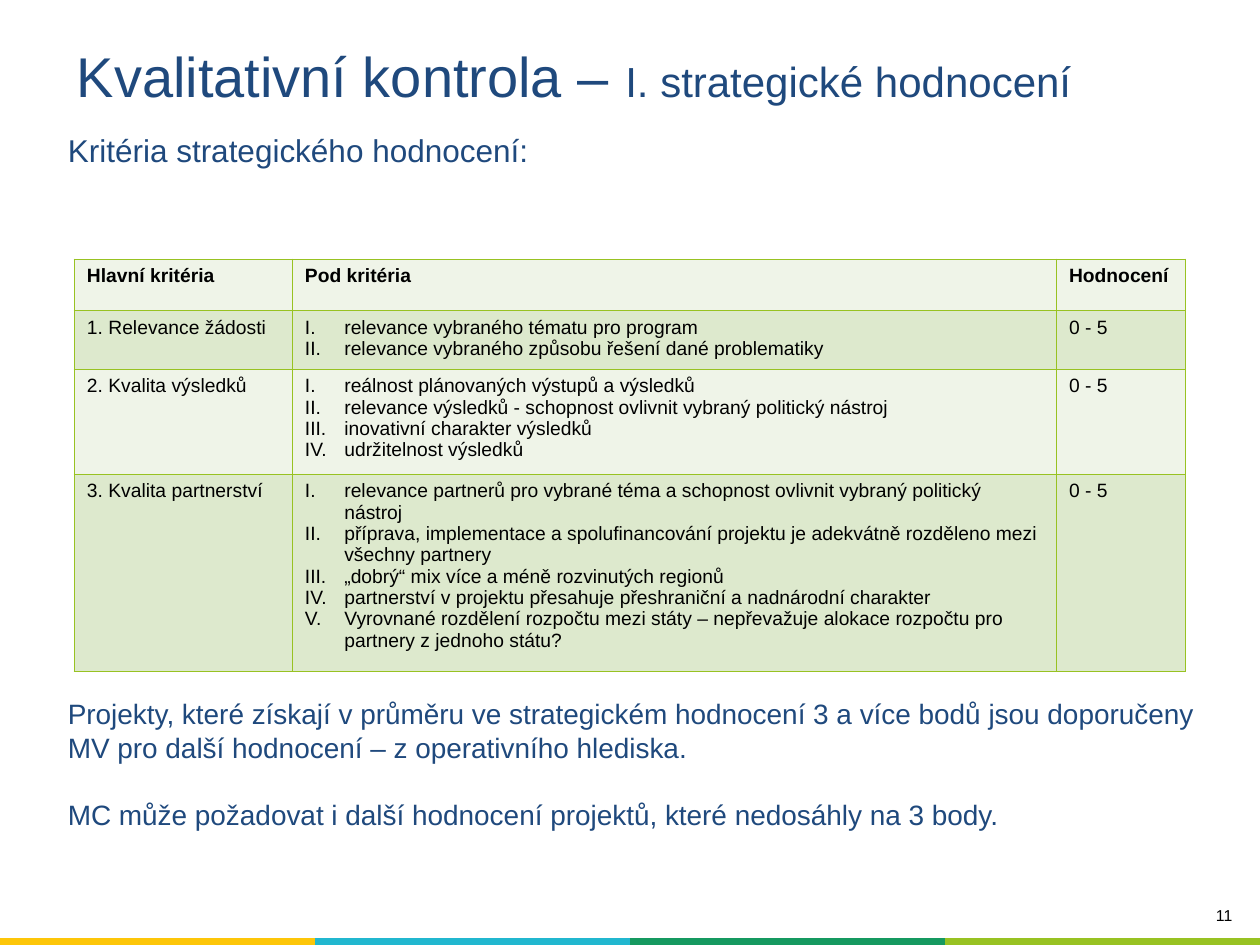
from dataclasses import dataclass

import pptx
import pptx.dml.color
import pptx.enum.text
import pptx.oxml
import pptx.oxml.ns
import pptx.util

Pt = pptx.util.Pt
ALIGN = pptx.enum.text.PP_ALIGN
ANCHOR = pptx.enum.text.MSO_ANCHOR
FIT = pptx.enum.text.MSO_AUTO_SIZE

COLORS = {
    "navy": "1F497D",
    "black": "000000",
    "lime": "98C222",
    "light": "EFF4E8",
    "shade": "DDE9CD",
    "yellow": "FDC609",
    "cyan": "21B7CF",
    "green": "159960",
}
PLAIN_TABLE = "{2D5ABB26-0587-4C30-8999-92F81FD0307C}"


@dataclass
class Frame:
    left: float
    top: float
    width: float
    height: float

    def lengths(self) -> list:
        return [Pt(n) for n in (self.left, self.top, self.width, self.height)]


@dataclass
class Criterion:
    name: str
    details: list[str]
    row_height: float
    score: str = "0 - 5"


@dataclass
class Note:
    frame: Frame
    lines: list[str]
    size: float
    color: str = "navy"
    align: ALIGN = ALIGN.LEFT
    gap: float = 0


HEADINGS = ["Hlavní kritéria", "Pod kritéria", "Hodnocení"]
HEADING_HEIGHT = 29.2
COLUMN_WIDTHS = [124.6, 436.6, 73.8]
CRITERIA = [
    Criterion("1. Relevance žádosti", [
        "relevance vybraného tématu pro program",
        "relevance vybraného způsobu řešení dané problematiky",
    ], 33.7),
    Criterion("2. Kvalita výsledků", [
        "reálnost plánovaných výstupů a výsledků",
        "relevance výsledků - schopnost ovlivnit vybraný politický nástroj",
        "inovativní charakter výsledků",
        "udržitelnost výsledků",
    ], 60),
    Criterion("3. Kvalita partnerství", [
        "relevance partnerů pro vybrané téma a schopnost ovlivnit vybraný politický nástroj",
        "příprava, implementace a spolufinancování projektu je adekvátně rozděleno mezi všechny partnery",
        "„dobrý“ mix více a méně rozvinutých regionů",
        "partnerství v projektu přesahuje přeshraniční a nadnárodní charakter",
        "Vyrovnané rozdělení rozpočtu mezi státy – nepřevažuje alokace rozpočtu pro partnery z jednoho státu?",
    ], 112.6),
]
NOTES = [
    Note(Frame(31.7, 71.3, 635, 104.4), ["Kritéria strategického hodnocení:"], 18),
    Note(Frame(31.7, 394.6, 662.4, 85), [
        "Projekty, které získají v průměru ve strategickém hodnocení 3 a více bodů "
        "jsou doporučeny MV pro další hodnocení – z operativního hlediska.",
        "MC může požadovat i další hodnocení projektů, které nedosáhly na 3 body.",
    ], 16, gap=19),
    Note(Frame(569.5, 514, 141.8, 22.3), ["11"], 9, "black", ALIGN.RIGHT),
]


def rgb(name: str) -> pptx.dml.color.RGBColor:
    return pptx.dml.color.RGBColor.from_string(COLORS[name])


def style_span(span, size: float, color: str, bold: bool = False) -> None:
    span.font.name = "Arial"
    span.font.size = Pt(size)
    span.font.bold = bold
    span.font.color.rgb = rgb(color)


def add_title(page, frame: Frame, parts: list[tuple[str, float]]) -> None:
    title = page.shapes.title
    title.left, title.top, title.width, title.height = frame.lengths()
    title.text_frame.auto_size = FIT.NONE
    title.text_frame.vertical_anchor = ANCHOR.MIDDLE
    para = title.text_frame.paragraphs[0]
    para.alignment = ALIGN.LEFT
    for text, size in parts:
        span = para.add_run()
        span.text = text
        style_span(span, size, "navy")


def add_note(page, note: Note) -> None:
    text_frame = page.shapes.add_textbox(*note.frame.lengths()).text_frame
    text_frame.word_wrap = True
    text_frame.text = "\n".join(note.lines)
    for index, para in enumerate(text_frame.paragraphs):
        para.alignment = note.align
        if index:
            para.space_before = Pt(note.gap)
        style_span(para.runs[0], note.size, note.color)


def add_plain_table(page, left: float, top: float, widths: list[float], heights: list[float]):
    frame = Frame(left, top, sum(widths), sum(heights))
    table = page.shapes.add_table(len(heights), len(widths), *frame.lengths()).table
    table.first_row = table.horz_banding = False
    style = table._tbl.tblPr.find(pptx.oxml.ns.qn("a:tableStyleId"))
    style.text = PLAIN_TABLE
    for column, width in zip(table.columns, widths):
        column.width = Pt(width)
    for row, height in zip(table.rows, heights):
        row.height = Pt(height)
    return table


def fill_cell(cell, color: str) -> None:
    cell.fill.solid()
    cell.fill.fore_color.rgb = rgb(color)


def border_cell(cell, color: str, width: float) -> None:
    properties = cell._tc.get_or_add_tcPr()
    for index, side in enumerate(("lnL", "lnR", "lnT", "lnB")):
        properties.insert(index, pptx.oxml.parse_xml(
            f'<a:{side} {pptx.oxml.ns.nsdecls("a")} w="{int(Pt(width))}"><a:solidFill>'
            f'<a:srgbClr val="{COLORS[color]}"/></a:solidFill></a:{side}>'))


def number_paragraph(para, indent: float) -> None:
    properties = para._p.get_or_add_pPr()
    properties.set("marL", str(int(Pt(indent))))
    properties.set("indent", str(-int(Pt(indent))))
    properties.append(pptx.oxml.parse_xml(
        f'<a:buAutoNum {pptx.oxml.ns.nsdecls("a")} type="romanUcPeriod"/>'))


def write_cell(cell, lines: list[str], bold: bool, numbered: bool) -> None:
    cell.text_frame.text = "\n".join(lines)
    for para in cell.text_frame.paragraphs:
        if numbered:
            number_paragraph(para, 22.5)
        para.line_spacing = Pt(12.2)
        style_span(para.runs[0], 11, "black", bold)


def add_criteria_table(page) -> None:
    heights = [HEADING_HEIGHT] + [item.row_height for item in CRITERIA]
    table = add_plain_table(page, 42.5, 148.2, COLUMN_WIDTHS, heights)
    rows = [[[heading] for heading in HEADINGS]]
    rows += [[[item.name], item.details, [item.score]] for item in CRITERIA]
    for r, row in enumerate(rows):
        for c, lines in enumerate(row):
            cell = table.cell(r, c)
            write_cell(cell, lines, bold=r == 0, numbered=r > 0 and c == 1)
            border_cell(cell, "lime", 1)
            fill_cell(cell, "shade" if r % 2 else "light")


def add_color_strip(page, colors: list[str]) -> None:
    table = add_plain_table(page, 0, 536, [720 / len(colors)] * len(colors), [12])
    for c, color in enumerate(colors):
        fill_cell(table.cell(0, c), color)


def main() -> None:
    deck = pptx.Presentation()
    deck.slide_width, deck.slide_height = Pt(720), Pt(540)
    page = deck.slides.add_slide(deck.slide_layouts[5])
    add_color_strip(page, ["yellow", "cyan", "green", "lime"])
    add_title(page, Frame(36.7, 20.9, 612, 43.9),
              [("Kvalitativní kontrola – ", 32), ("I. strategické hodnocení", 24)])
    for note in NOTES:
        add_note(page, note)
    add_criteria_table(page)
    deck.save("out.pptx")


if __name__ == "__main__":
    main()
